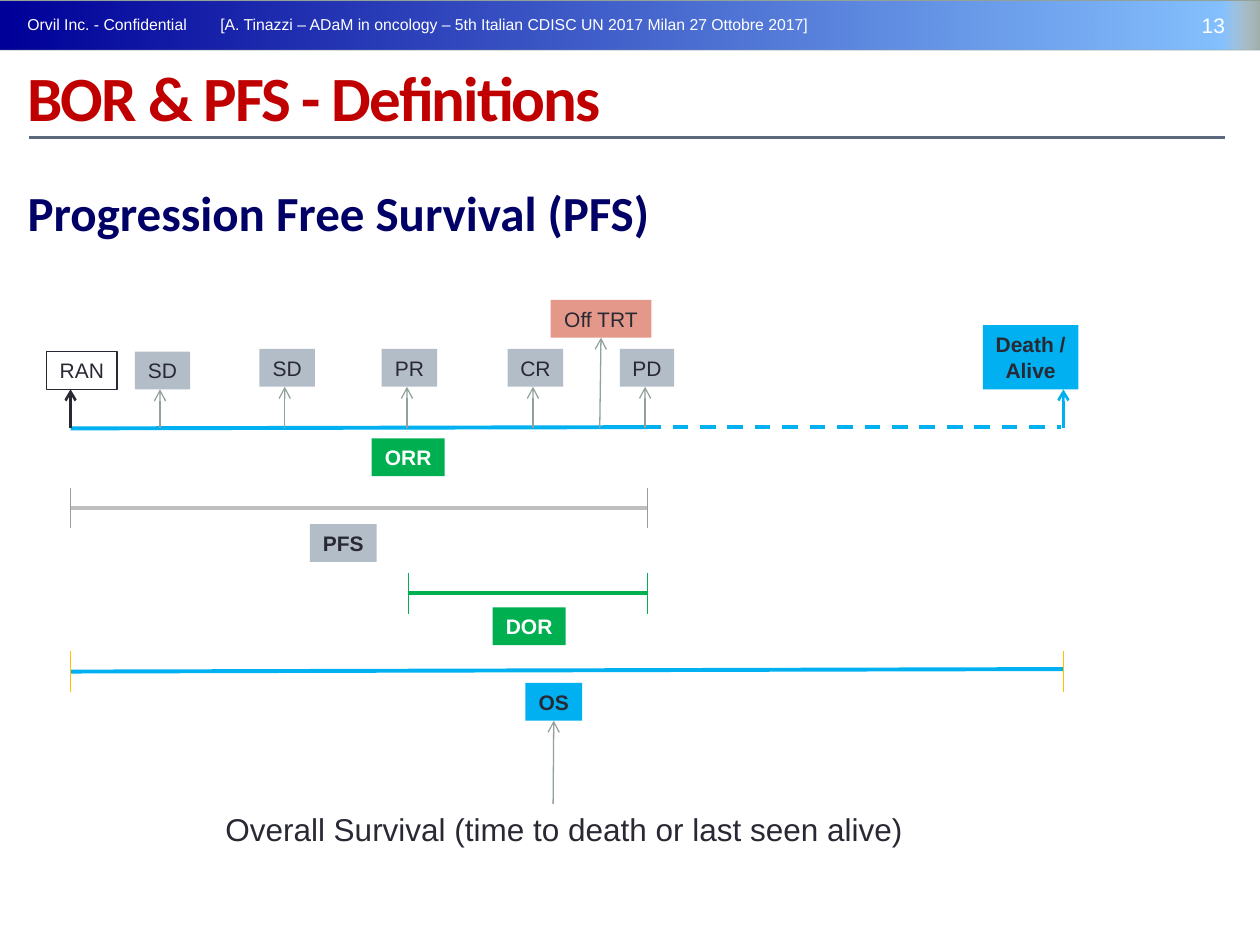
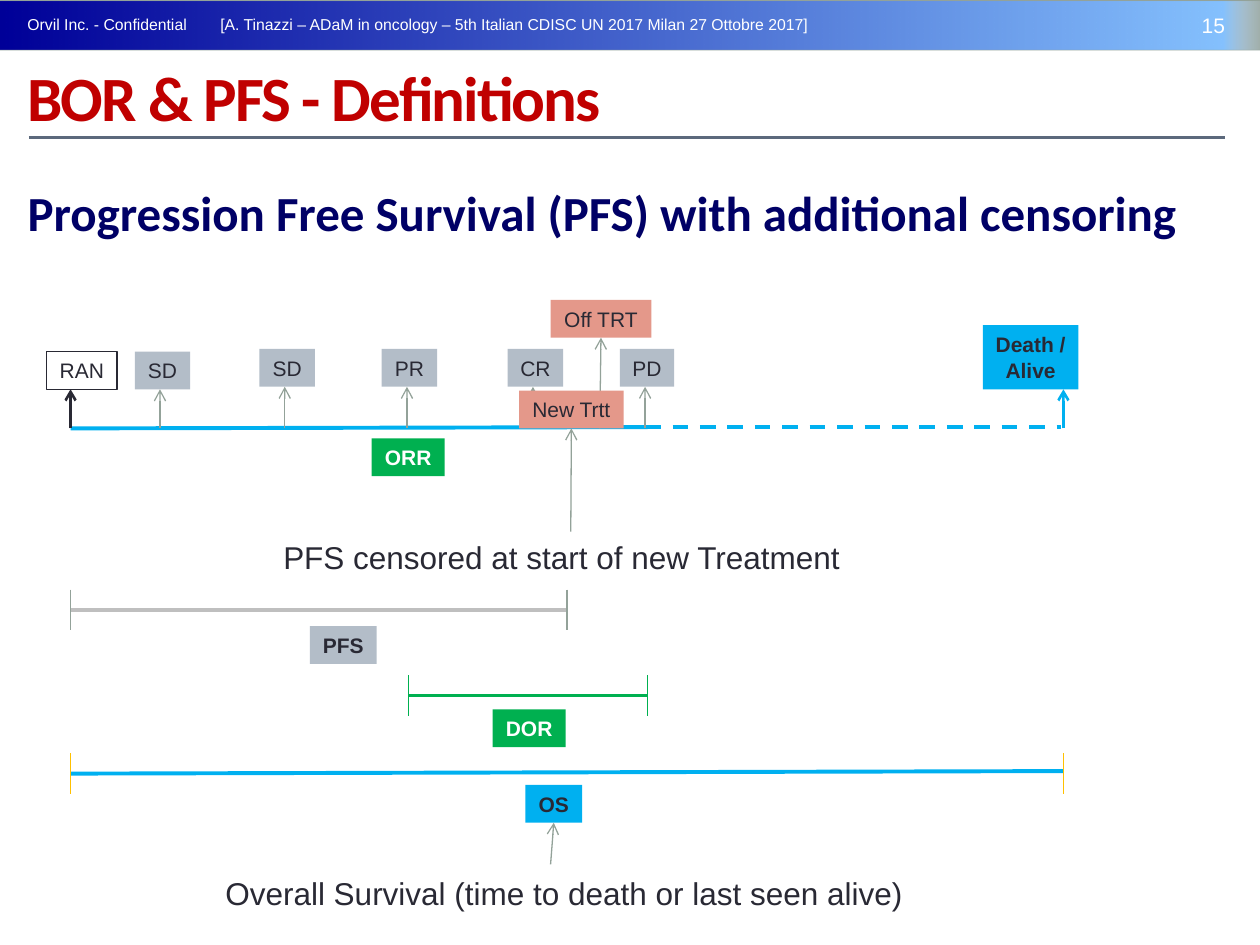
from dataclasses import dataclass
from typing import Optional

from pptx import Presentation
from pptx import util as u
from pptx.dml.color import RGBColor
from pptx.enum import dml, shapes, text
from pptx.oxml import parse_xml
from pptx.oxml.ns import nsdecls, qn

WHITE = RGBColor(0xFF, 0xFF, 0xFF)
INK = RGBColor(0x29, 0x29, 0x34)
NAVY = RGBColor(0x00, 0x00, 0x66)
RED = RGBColor(0xC0, 0x00, 0x00)
SLATE = RGBColor(0x5C, 0x69, 0x7C)
SAGE = RGBColor(0x93, 0xA2, 0x99)
MIST = RGBColor(0xB3, 0xBD, 0xC8)
SILVER = RGBColor(0xBF, 0xBF, 0xBF)
SKY = RGBColor(0x00, 0xB0, 0xF0)
GREEN = RGBColor(0x00, 0xB0, 0x50)
GOLD = RGBColor(0xFF, 0xC0, 0x00)
CORAL = RGBColor(0xE4, 0x98, 0x8A)

BAND_STOPS = (("000099", 0, 100), ("85C2FF", 97, 100), ("D7E3F1", 100, 18), ("FFEBFA", 100, 100))
TITLE = "BOR & PFS - Definitions"
COMPANY = "Orvil Inc. - Confidential"
EVENT = "[A. Tinazzi – ADaM in oncology – 5th Italian CDISC UN 2017 Milan 27 Ottobre 2017]"
OVERALL_SURVIVAL = "Overall Survival (time to death or last seen alive)"
START, PROGRESSION, DEATH = 0.56, 5.14, 8.44
AXIS = 3.4
TICK = 0.16
BOTTOM_SIDE = 2


@dataclass(frozen=True)
class TextStyle:
    """Look of a run of text."""
    size: float
    color: RGBColor
    font: str = "Arial"
    bold: bool = False
    spacing: int = 0


@dataclass(frozen=True)
class Label:
    """Filled box with a short caption; no fill means an outlined box."""
    caption: str
    left: float
    top: float
    width: float
    fill: Optional[RGBColor] = MIST
    color: RGBColor = INK
    bold: bool = False
    height: float = 0.3


@dataclass(frozen=True)
class Milestone:
    """Labelled event whose arrow rises from a foot point to the label."""
    label: Label
    foot_x: float
    foot_y: float = AXIS
    color: RGBColor = SAGE
    weight: float = 0.75
    joined: bool = False


@dataclass(frozen=True)
class Span:
    """Horizontal duration with a tick at each end and a label below."""
    label: Label
    start: float
    end: float
    y: float
    color: RGBColor
    tick_color: RGBColor
    rise: float = 0


@dataclass(frozen=True)
class Note:
    """Large explanatory text."""
    words: str
    left: float
    top: float
    width: float


@dataclass(frozen=True)
class Page:
    """Everything that differs between the slides."""
    number: str
    heading: str
    shift: float
    pfs_end: float
    os_arrow_x: float
    os_arrow_y: float
    notes: tuple[Note, ...]
    extra: tuple[Milestone, ...] = ()


BAND_TEXT = TextStyle(9, WHITE)
NUMBER_TEXT = TextStyle(12, WHITE)
TITLE_TEXT = TextStyle(36, RED, "Calibri", True, -100)
HEADING_TEXT = TextStyle(28, NAVY, "Calibri", True)
NOTE_TEXT = TextStyle(18, INK)

MILESTONES = (
    Milestone(Label("RAN", 0.37, 2.79, 0.56, None), START, color=INK, weight=1.5),
    Milestone(Label("SD", 1.07, 2.79, 0.44), 1.27),
    Milestone(Label("SD", 2.06, 2.77, 0.44), 2.26),
    Milestone(Label("PR", 3.03, 2.77, 0.44), 3.23),
    Milestone(Label("CR", 4.03, 2.77, 0.44), 4.23),
    Milestone(Label("PD", 4.92, 2.77, 0.43), 5.12),
    Milestone(Label("Death /\nAlive", 7.8, 2.58, 0.76, SKY, bold=True, height=0.51),
              DEATH, color=SKY, weight=1.5),
    Milestone(Label("Off TRT", 4.37, 2.38, 0.8, CORAL), 4.76, joined=True),
)
NEW_TREATMENT = Milestone(Label("New Trtt", 4.12, 3.1, 0.83, CORAL), 4.53, 4.22, joined=True)
ORR = Label("ORR", 2.95, 3.48, 0.58, GREEN, WHITE, True)

PAGES = (
    Page("13", "Progression Free Survival (PFS)", 0, PROGRESSION, 4.39, 6.38,
         (Note(OVERALL_SURVIVAL, 1.69, 6.38, 5.63),)),
    Page("15", "Progression Free Survival (PFS) with additional censoring", 0.81, 4.5, 4.37, 6.86,
         (Note(OVERALL_SURVIVAL, 1.69, 6.89, 5.63),
          Note("PFS censored at start of new Treatment", 2.15, 4.22, 4.66)),
         (NEW_TREATMENT,)),
)


def add_run(paragraph, words: str, style: TextStyle) -> None:
    """Append a styled run to a paragraph."""
    run = paragraph.add_run()
    run.text = words
    font = run.font
    font.name, font.size, font.bold = style.font, u.Pt(style.size), style.bold
    font.color.rgb = style.color
    if style.spacing:
        run._r.get_or_add_rPr().set("spc", str(style.spacing))


def fill_frame(frame, words: str, style: TextStyle, align, wrap: bool, grow: bool) -> None:
    """Write each line of the words as a paragraph of the frame."""
    frame.word_wrap = wrap
    fit = text.MSO_AUTO_SIZE
    frame.auto_size = fit.SHAPE_TO_FIT_TEXT if grow else fit.NONE
    for index, line in enumerate(words.split("\n")):
        paragraph = frame.add_paragraph() if index else frame.paragraphs[0]
        paragraph.alignment = align
        add_run(paragraph, line, style)


def add_text(slide, words: str, left: float, top: float, width: float, height: float,
             style: TextStyle, align=text.PP_ALIGN.LEFT, wrap: bool = False, grow: bool = True):
    """Add a text box and return its frame."""
    box = slide.shapes.add_textbox(*map(u.Inches, (left, top, width, height)))
    fill_frame(box.text_frame, words, style, align, wrap, grow)
    return box.text_frame


def add_box(slide, left: float, top: float, width: float, height: float,
            fill: Optional[RGBColor]):
    """Add a plain rectangle; without a fill it gets a dark outline."""
    box = slide.shapes.add_shape(shapes.MSO_SHAPE.RECTANGLE,
                                 *map(u.Inches, (left, top, width, height)))
    box.shadow.inherit = False
    if fill is None:
        box.fill.background()
        box.line.color.rgb, box.line.width = INK, u.Pt(0.75)
    else:
        box.fill.solid()
        box.fill.fore_color.rgb = fill
        box.line.fill.background()
    return box


def add_line(slide, x1: float, y1: float, x2: float, y2: float, color: RGBColor,
             weight: float, dashed: bool = False, arrow: bool = False):
    """Add a straight line, optionally dashed or with an arrowhead."""
    line = slide.shapes.add_connector(shapes.MSO_CONNECTOR.STRAIGHT,
                                      *map(u.Inches, (x1, y1, x2, y2)))
    line.line.color.rgb, line.line.width = color, u.Pt(weight)
    if dashed:
        line.line.dash_style = dml.MSO_LINE.DASH
    properties = line._element.spPr
    if arrow:
        outline = properties.find(qn("a:ln"))
        outline.append(parse_xml(f'<a:tailEnd {nsdecls("a")} type="arrow"/>'))
    properties.append(parse_xml(f'<a:effectLst {nsdecls("a")}/>'))
    return line


def add_label(slide, label: Label, shift: float = 0):
    """Draw a label, moved down by the shift."""
    box = add_box(slide, label.left, label.top + shift, label.width, label.height, label.fill)
    style = TextStyle(12, label.color, bold=label.bold)
    fill_frame(box.text_frame, label.caption, style, text.PP_ALIGN.CENTER, False, True)
    return box


def add_milestone(slide, milestone: Milestone, shift: float = 0) -> None:
    """Draw a label and the arrow pointing up at it."""
    label = milestone.label
    box = add_label(slide, label, shift)
    arrow = add_line(slide, milestone.foot_x, milestone.foot_y, milestone.foot_x,
                     label.top + label.height + shift, milestone.color, milestone.weight,
                     arrow=True)
    if milestone.joined:
        arrow.end_connect(box, BOTTOM_SIDE)


def add_span(slide, span: Span, shift: float) -> None:
    """Draw a duration bar with its end ticks."""
    y = span.y + shift
    add_line(slide, span.start, y, span.end, y - span.rise, span.color, 2.25)
    for x in (span.start, span.end):
        add_line(slide, x, y - TICK, x, y + TICK, span.tick_color, 0.75)


def add_frame(slide, page: Page) -> None:
    """Draw the top band, title, rule and heading."""
    add_box(slide, 0, 0, 10, 0.4, SAGE)
    band = add_box(slide, 0, 0.01, 10, 0.38, WHITE)
    stops = "".join(
        f'<a:gs pos="{place * 1000}"><a:srgbClr val="{color}">'
        f'<a:alpha val="{alpha * 1000}"/></a:srgbClr></a:gs>'
        for color, place, alpha in BAND_STOPS)
    solid = band._element.spPr.find(qn("a:solidFill"))
    solid.getparent().replace(solid, parse_xml(
        f'<a:gradFill {nsdecls("a")}><a:gsLst>{stops}</a:gsLst><a:lin ang="0"/></a:gradFill>'))
    add_text(slide, COMPANY, 0.12, 0.07, 1.53, 0.25, BAND_TEXT)
    add_text(slide, page.number, 9.13, 0.05, 0.69, 0.3, NUMBER_TEXT,
             text.PP_ALIGN.RIGHT, wrap=True)
    add_text(slide, EVENT, 1.65, 0.07, 4.89, 0.25, BAND_TEXT)
    add_text(slide, page.heading, 0.12, 1.4, 9.61, 0.85, HEADING_TEXT, wrap=True, grow=False)
    add_line(slide, 0.23, 1.09, 9.72, 1.09, SLATE, 1.5)
    title = add_text(slide, TITLE, 0.12, 0.45, 9.37, 0.63, TITLE_TEXT, wrap=True, grow=False)
    title.vertical_anchor = text.MSO_ANCHOR.MIDDLE


def add_page(presentation, page: Page) -> None:
    """Build one slide."""
    slide = presentation.slides.add_slide(presentation.slide_layouts[6])
    add_frame(slide, page)
    add_line(slide, START, AXIS, PROGRESSION, 3.39, SKY, 2.25)
    add_line(slide, 5.12, 3.39, 8.42, 3.39, SKY, 2.25, dashed=True)
    for milestone in MILESTONES + page.extra:
        add_milestone(slide, milestone)
    add_label(slide, ORR)
    pfs = Span(Label("PFS", 2.46, 4.16, 0.53, bold=True), START, page.pfs_end, 4.03, SILVER, SAGE)
    dor = Span(Label("DOR", 3.91, 4.82, 0.58, GREEN, WHITE, True), 3.24, PROGRESSION, 4.71,
               GREEN, GREEN)
    survival = Span(Label("OS", 4.17, 5.42, 0.45, SKY, bold=True), START, DEATH, 5.33,
                    SKY, GOLD, 0.02)
    for span in (pfs, dor, survival):
        add_span(slide, span, page.shift)
    for span in (pfs, dor):
        add_label(slide, span.label, page.shift)
    add_milestone(slide, Milestone(survival.label, page.os_arrow_x, page.os_arrow_y, joined=True),
                  page.shift)
    for note in page.notes:
        add_text(slide, note.words, note.left, note.top, note.width, 0.4, NOTE_TEXT)


def main() -> None:
    """Build and save the presentation."""
    presentation = Presentation()
    presentation.slide_width, presentation.slide_height = u.Inches(10), u.Inches(7.5)
    for page in PAGES:
        add_page(presentation, page)
    presentation.save("out.pptx")


if __name__ == "__main__":
    main()
